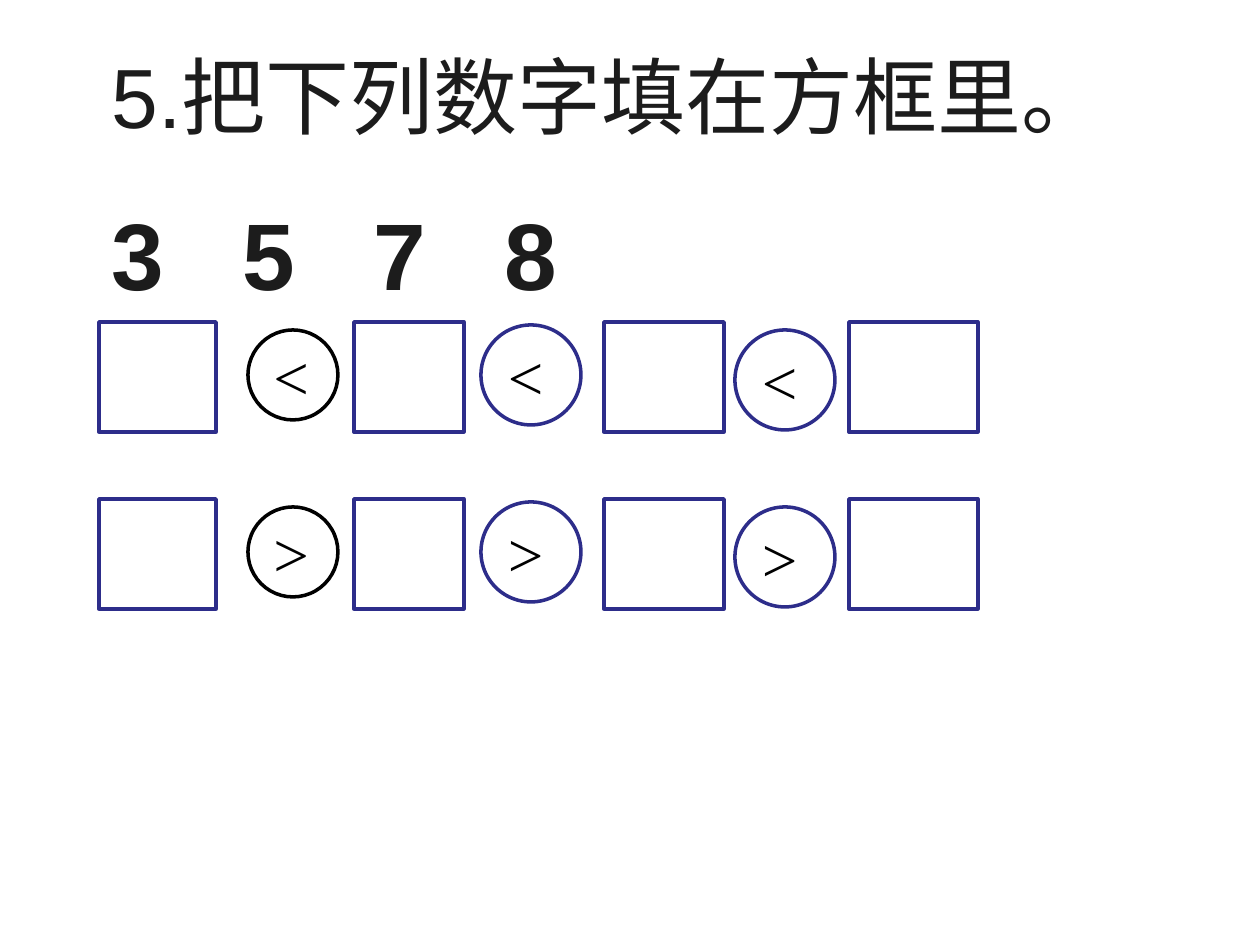
from pptx import Presentation
from pptx.dml.color import RGBColor
from pptx.enum.shapes import MSO_SHAPE as Shape
from pptx.enum.text import MSO_ANCHOR as Anchor, MSO_AUTO_SIZE as AutoSize, PP_ALIGN as Align
from pptx.util import Pt
from lxml.etree import SubElement
from pptx.oxml.ns import qn

PX = 914400 // 126
COLORS = {"ink": "1C1C1C", "navy": "2D2D8A", "black": "000000", "white": "FFFFFF"}


def write(box, text, color, anchor, **font):
    frame = box.text_frame
    frame.auto_size = AutoSize.NONE
    frame.word_wrap = True
    frame.vertical_anchor = anchor
    para = frame.paragraphs[0]
    para.alignment = Align.LEFT
    span = para.add_run()
    span.text = text
    for name, value in font.items():
        setattr(span.font, name, value)
    span.font.color.rgb = RGBColor.from_string(COLORS[color])
    return frame


def add_outlined(page, kind, line, *place):
    shape = page.shapes.add_shape(kind, *(n * PX for n in place))
    shape.shadow.inherit = False
    shape.fill.solid()
    shape.fill.fore_color.rgb = RGBColor.from_string(COLORS["white"])
    shape.line.color.rgb = RGBColor.from_string(COLORS[line])
    shape.line.width = Pt(2)
    return shape


deck = Presentation()
deck.slide_width, deck.slide_height = 1260 * PX, 945 * PX
page = deck.slides.add_slide(deck.slide_layouts[5])

# Numbers to place, spread on even tab stops
numbers = page.shapes.title
for name, value in {"left": 99, "top": 180, "width": 1071, "height": 615}.items():
    setattr(numbers, name, value * PX)
tabs = SubElement(numbers.text_frame.paragraphs[0]._p.get_or_add_pPr(), qn("a:tabLst"))
for step in range(1, 4):
    SubElement(tabs, qn("a:tab"), pos=str(step * 131 * PX), algn="l")
frame = write(numbers, "3\t5\t7\t8", "ink", Anchor.TOP, name="Arial", size=Pt(54), bold=True)
frame.margin_top = 16 * PX

# Question
question = page.shapes.add_textbox(99 * PX, 55 * PX, 1071 * PX, 97 * PX)
write(question, "5.把下列数字填在方框里。", "ink", Anchor.BOTTOM, name="Arial", size=Pt(48))

# Two rows of empty squares with comparison signs between them
squares = [(99, 117), (354, 110), (604, 120), (849, 129)]
circles = [(248, 8, 90, "black"), (481, 3, 100, "navy"), (735, 8, 100, "navy")]
for top, sign in [(322, "<"), (499, ">")]:
    for left, width in squares:
        add_outlined(page, Shape.RECTANGLE, "navy", left, top, width, 110)
    for left, drop, size, line in circles:
        circle = add_outlined(page, Shape.OVAL, line, left, top + drop, size, size)
        write(circle, sign, "black", Anchor.MIDDLE, name="Times New Roman", size=Pt(36))

deck.save("out.pptx")
